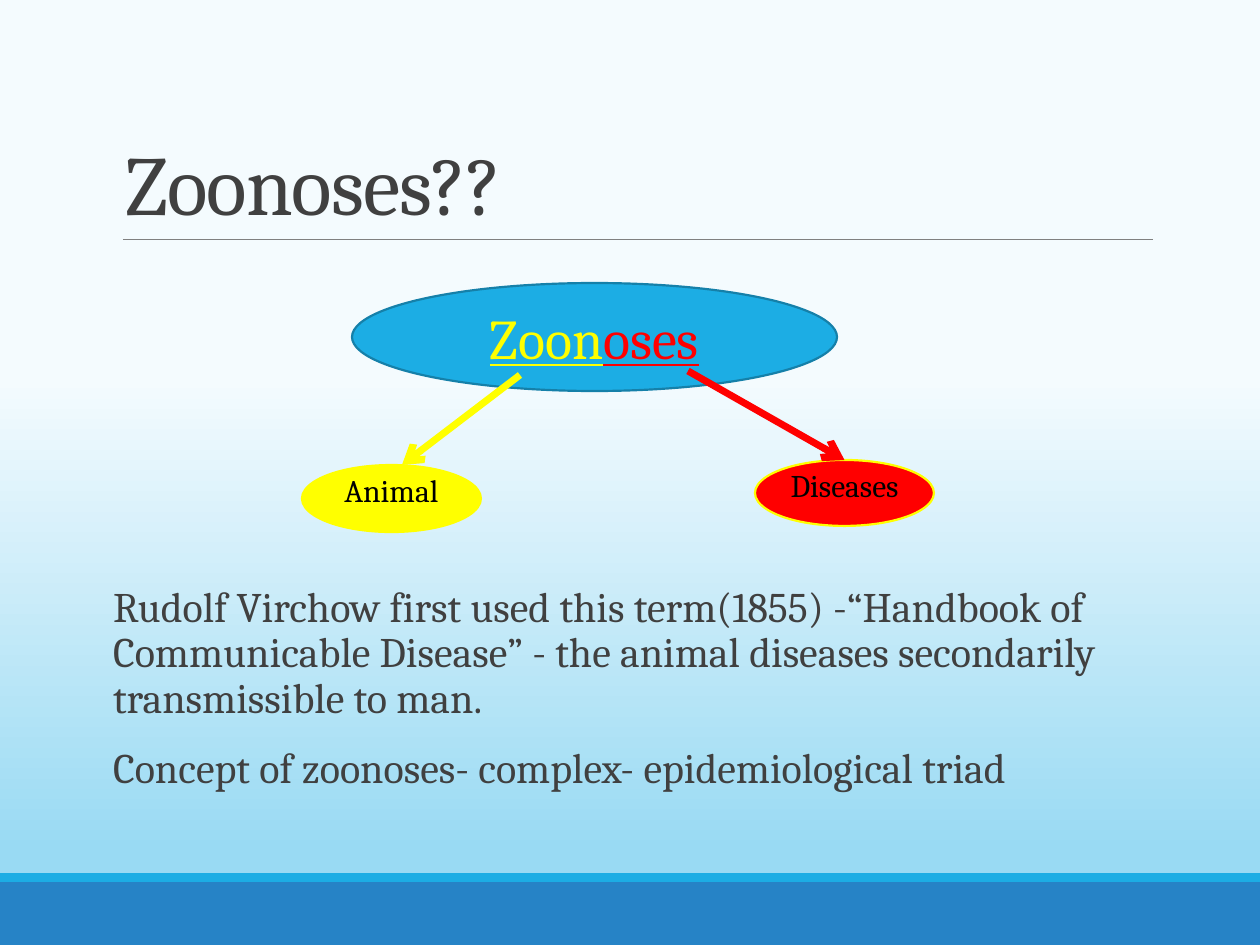
from lxml import etree
from pptx import Presentation
from pptx.dml.color import RGBColor
from pptx.enum.shapes import MSO_CONNECTOR, MSO_SHAPE
from pptx.enum.text import MSO_ANCHOR, MSO_AUTO_SIZE, PP_ALIGN
from pptx.oxml import parse_xml
from pptx.oxml.ns import nsdecls, qn
from pptx.util import Emu, Pt

RECTANGLE, OVAL = MSO_SHAPE.RECTANGLE, MSO_SHAPE.OVAL
STRAIGHT = MSO_CONNECTOR.STRAIGHT
LEFT, CENTER = PP_ALIGN.LEFT, PP_ALIGN.CENTER
TOP, MIDDLE, BOTTOM = MSO_ANCHOR.TOP, MSO_ANCHOR.MIDDLE, MSO_ANCHOR.BOTTOM
NO_AUTOFIT = MSO_AUTO_SIZE.NONE

SLIDE_W, SLIDE_H = 1260, 945
EMU_PER_PX = 914400 / 126
FONT = "Cambria"
COLORS = {
    "band": "2683C6", "accent": "1CADE4", "accent_edge": "1580A9",
    "rule": "808080", "text": "404040", "label": "000000",
    "animal": "FFFF00", "disease": "FF0000",
}
SKY_STOPS = [(40, "F4FBFE"), (90, "99DAF3"), (100, "99DAF3")]
STATEMENTS = [
    "Rudolf Virchow first used this term(1855) -“Handbook of Communicable "
    "Disease” - the animal diseases secondarily transmissible to man.",
    "Concept of zoonoses- complex- epidemiological triad",
]


def px(length):
    return Emu(round(length * EMU_PER_PX))


def color(name):
    return RGBColor.from_string(COLORS[name])


def place(shape, box):
    shape.left, shape.top, shape.width, shape.height = map(px, box)


def set_font(font, size, color_name):
    font.name, font.size = FONT, Pt(size)
    font.color.rgb = color(color_name)


def add_filled(slide, preset, box, fill, edge=None):
    shape = slide.shapes.add_shape(preset, *map(px, box))
    shape.shadow.inherit = False
    shape.fill.solid()
    shape.fill.fore_color.rgb = color(fill)
    if edge:
        shape.line.color.rgb = color(edge)
        shape.line.width = Pt(1.25)
    else:
        shape.line.fill.background()
    return shape


def add_line(slide, start, end, color_name, width, arrow=False):
    line = slide.shapes.add_connector(STRAIGHT, *map(px, (*start, *end)))
    line.line.color.rgb = color(color_name)
    line.line.width = Pt(width)
    if arrow:
        etree.SubElement(line.line._get_or_add_ln(), qn("a:tailEnd"), type="arrow")
    etree.SubElement(line._element.spPr, qn("a:effectLst"))
    return line


def add_label(slide, box, text, align):
    label = slide.shapes.add_textbox(*map(px, box))
    label.text_frame.word_wrap = True
    paragraph = label.text_frame.paragraphs[0]
    paragraph.text, paragraph.alignment = text, align
    set_font(paragraph.font, 18, "label")


def paint_background(slide):
    """Fill the slide with a vertical sky gradient."""
    stops = "".join(
        f'<a:gs pos="{percent * 1000}"><a:srgbClr val="{shade}"/></a:gs>'
        for percent, shade in SKY_STOPS)
    gradient = parse_xml(
        f'<a:gradFill {nsdecls("a")} rotWithShape="1"><a:gsLst>{stops}</a:gsLst>'
        '<a:lin ang="5400000" scaled="0"/></a:gradFill>')
    slide.background.fill.solid()
    properties = slide.background._cSld.bg.bgPr
    properties.replace(properties.find(qn("a:solidFill")), gradient)


def build_footer(slide, box):
    left, top, width, height = box
    stripe = 9
    add_filled(slide, RECTANGLE, (left, top + stripe, width, height - stripe), "band")
    add_filled(slide, RECTANGLE, (left, top, width, stripe), "accent")


def build_title(slide, box):
    left, top, width, height = box
    title = slide.shapes.title
    place(title, box)
    frame = title.text_frame
    frame.auto_size, frame.vertical_anchor = NO_AUTOFIT, BOTTOM
    paragraph = frame.paragraphs[0]
    paragraph.alignment, paragraph.line_spacing = LEFT, 0.85
    heading = paragraph.add_run()
    heading.text = "Zoonoses??"
    set_font(heading.font, 48, "text")
    heading.font._element.set("spc", "-50")
    rule_y = top + height
    add_line(slide, (left + 10, rule_y), (left + width, rule_y), "rule", 0.5)


def build_diagram(slide, box):
    """Split the word into its two roots, each with an arrow to its meaning."""
    left, top, _, _ = box

    def at(x, y, *size):
        return (left + x, top + y, *size)

    diseases = add_filled(slide, OVAL, at(453, 177, 179, 66), "disease", "animal")
    add_filled(slide, OVAL, at(0, 182, 179, 67), "animal", "animal")

    word = add_filled(slide, OVAL, at(50, 0, 485, 108), "accent", "accent_edge")
    word.text_frame.vertical_anchor = MIDDLE
    paragraph = word.text_frame.paragraphs[0]
    paragraph.alignment = CENTER
    for root, color_name in (("Zoon", "animal"), ("oses", "disease")):
        run = paragraph.add_run()
        run.text = root
        set_font(run.font, 32, color_name)
        run.font.underline = True

    add_line(slide, at(218, 92), at(100, 182), "animal", 4, arrow=True)
    to_diseases = add_line(slide, at(386, 88), at(542, 177), "disease", 4, arrow=True)
    to_diseases.end_connect(diseases, 0)

    add_label(slide, at(30, 182, 139, 50), "Animal", LEFT)
    add_label(slide, at(458, 177, 169, 50), "Diseases", CENTER)


def build_body(slide, box):
    body = slide.placeholders[1]
    place(body, box)
    frame = body.text_frame
    frame.auto_size, frame.vertical_anchor = NO_AUTOFIT, TOP
    frame.margin_left = frame.margin_right = 0
    frame.text = "\n".join(STATEMENTS)
    for paragraph in frame.paragraphs:
        paragraph.line_spacing = 0.9
        paragraph.space_before, paragraph.space_after = Pt(12), Pt(2)
        set_font(paragraph.font, 24, "text")
        properties = paragraph._p.get_or_add_pPr()
        properties.set("marL", "0")
        properties.set("indent", "0")
        no_bullet = etree.Element(qn("a:buNone"))
        properties.find(qn("a:defRPr")).addprevious(no_bullet)


def main():
    deck = Presentation()
    deck.slide_width, deck.slide_height = px(SLIDE_W), px(SLIDE_H)
    slide = deck.slides.add_slide(deck.slide_layouts[1])
    paint_background(slide)
    build_footer(slide, (0, 873, SLIDE_W, 72))
    build_title(slide, (113, 39, 1040, 200))
    build_diagram(slide, (302, 283, 632, 249))
    build_body(slide, (113, 580, 1040, 238))
    deck.save("out.pptx")


if __name__ == "__main__":
    main()
